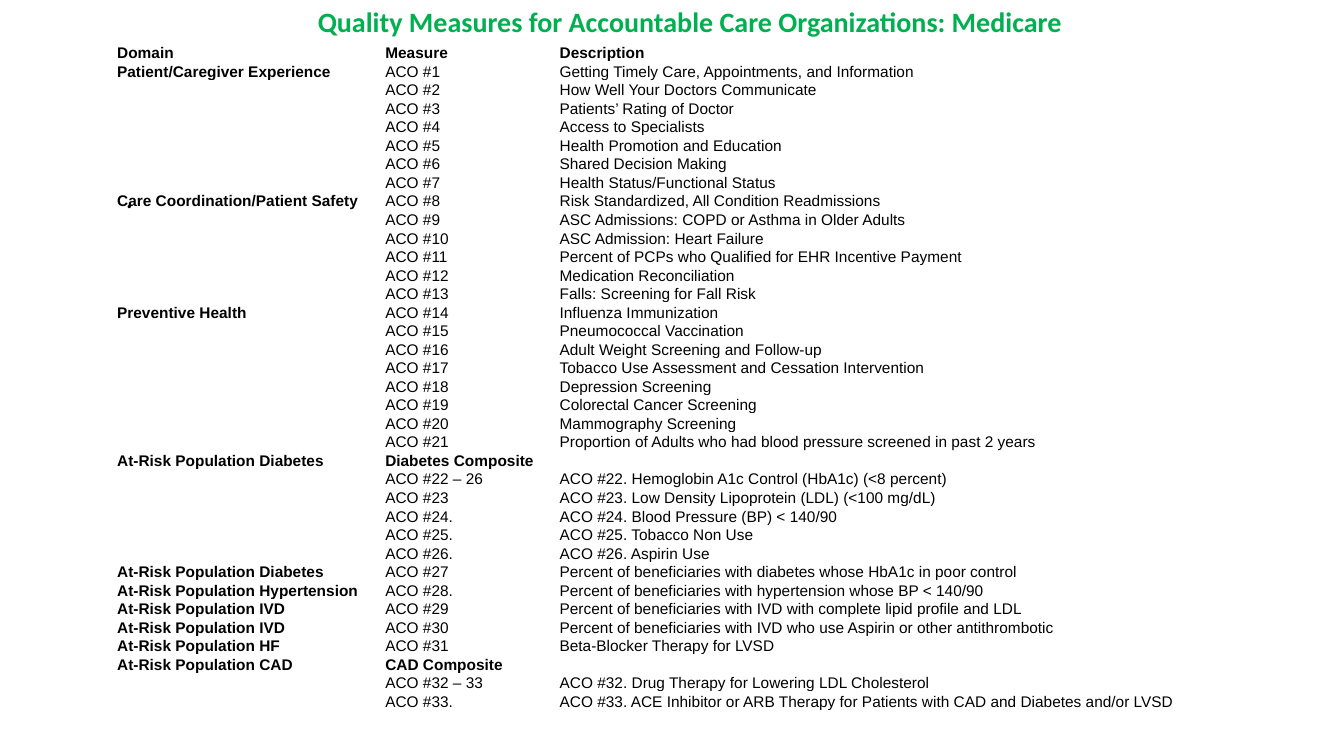
from dataclasses import dataclass

from lxml import etree
from pptx import Presentation
from pptx import util as u
from pptx.dml import color
from pptx.enum import text
from pptx.oxml import ns

Pt = u.Pt


@dataclass(frozen=True)
class Theme:
    green: str = "00B050"
    black: str = "000000"
    white: str = "FFFFFF"
    heading_font: str = "Calibri"
    table_font: str = "Arial"
    heading_size: float = 20
    table_size: float = 11


THEME = Theme()
NO_TABLE_STYLE = "{2D5ABB26-0587-4C30-8999-92F81FD0307C}"
HEADER = ("Domain", "Measure", "Description")

# Each domain with its measures; a measure without description heads a composite
DOMAINS = [
    ("Patient/Caregiver Experience", [
        ("ACO #1", "Getting Timely Care, Appointments, and Information"),
        ("ACO #2", "How Well Your Doctors Communicate"),
        ("ACO #3", "Patients’ Rating of Doctor"),
        ("ACO #4", "Access to Specialists"),
        ("ACO #5", "Health Promotion and Education"),
        ("ACO #6", "Shared Decision Making"),
        ("ACO #7", "Health Status/Functional Status")]),
    ("Care Coordination/Patient Safety", [
        ("ACO #8", "Risk Standardized, All Condition Readmissions"),
        ("ACO #9", "ASC Admissions: COPD or Asthma in Older Adults"),
        ("ACO #10", "ASC Admission: Heart Failure"),
        ("ACO #11", "Percent of PCPs who Qualified for EHR Incentive Payment"),
        ("ACO #12", "Medication Reconciliation"),
        ("ACO #13", "Falls: Screening for Fall Risk")]),
    ("Preventive Health", [
        ("ACO #14", "Influenza Immunization"),
        ("ACO #15", "Pneumococcal Vaccination"),
        ("ACO #16", "Adult Weight Screening and Follow-up"),
        ("ACO #17", "Tobacco Use Assessment and Cessation Intervention"),
        ("ACO #18", "Depression Screening"),
        ("ACO #19", "Colorectal Cancer Screening"),
        ("ACO #20", "Mammography Screening"),
        ("ACO #21", "Proportion of Adults who had blood pressure screened in past 2 years")]),
    ("At-Risk Population Diabetes", [
        ("Diabetes Composite", ""),
        ("ACO #22 – 26", "ACO #22. Hemoglobin A1c Control (HbA1c) (<8 percent)"),
        ("ACO #23", "ACO #23. Low Density Lipoprotein (LDL) (<100 mg/dL)"),
        ("ACO #24.", "ACO #24. Blood Pressure (BP) < 140/90"),
        ("ACO #25.", "ACO #25. Tobacco Non Use"),
        ("ACO #26.", "ACO #26. Aspirin Use")]),
    ("At-Risk Population Diabetes", [
        ("ACO #27", "Percent of beneficiaries with diabetes whose HbA1c in poor control")]),
    ("At-Risk Population Hypertension", [
        ("ACO #28.", "Percent of beneficiaries with hypertension whose BP < 140/90")]),
    ("At-Risk Population IVD", [
        ("ACO #29", "Percent of beneficiaries with IVD with complete lipid profile and LDL")]),
    ("At-Risk Population IVD", [
        ("ACO #30", "Percent of beneficiaries with IVD who use Aspirin or other antithrombotic")]),
    ("At-Risk Population HF", [
        ("ACO #31", "Beta-Blocker Therapy for LVSD")]),
    ("At-Risk Population CAD", [
        ("CAD Composite", ""),
        ("ACO #32 – 33", "ACO #32. Drug Therapy for Lowering LDL Cholesterol"),
        ("ACO #33.", "ACO #33. ACE Inhibitor or ARB Therapy for Patients with CAD "
                     "and Diabetes and/or LVSD")]),
]


def style_runs(paragraph, font, size, rgb, bold):
    for run in paragraph.runs:
        run.font.name = font
        run.font.size = Pt(size)
        run.font.bold = bold
        run.font.color.rgb = color.RGBColor.from_string(rgb)


def add_heading(slide, box, words, rgb, bold, align, anchor, before=0):
    """One paragraph in the heading type, in a box of (left, top, width, height)."""
    heading = slide.shapes.add_textbox(*map(Pt, box))
    frame = heading.text_frame
    frame.word_wrap = True
    frame.vertical_anchor = anchor
    frame.text = words
    paragraph = frame.paragraphs[0]
    paragraph.alignment = align
    paragraph.line_spacing = 0.9
    paragraph.space_before = Pt(before)
    style_runs(paragraph, THEME.heading_font, THEME.heading_size, rgb, bold)


def add_borders(cell):
    properties = cell._tc.get_or_add_tcPr()
    for side in ("lnL", "lnR", "lnT", "lnB"):
        line = etree.SubElement(properties, ns.qn(f"a:{side}"), w=str(Pt(1)))
        fill = etree.SubElement(line, ns.qn("a:solidFill"))
        etree.SubElement(fill, ns.qn("a:srgbClr"), val=THEME.white)


def fill_cell(cell, words, bold):
    cell.margin_left = cell.margin_right = Pt(0.9)
    cell.margin_top = cell.margin_bottom = 0
    cell.vertical_anchor = text.MSO_ANCHOR.BOTTOM
    add_borders(cell)
    cell.fill.background()
    cell.text_frame.text = words
    paragraph = cell.text_frame.paragraphs[0]
    style_runs(paragraph, THEME.table_font, THEME.table_size, THEME.black, bold)
    if not words:  # keeps empty cells from stretching the row
        etree.SubElement(paragraph._p, ns.qn("a:endParaRPr"),
                         sz=str(int(THEME.table_size * 50)))


def add_measures(slide, box, column_shares):
    """Table of all measures; rows share the height of the box evenly."""
    left, top, width, height = box
    rows = [HEADER]
    for domain, measures in DOMAINS:
        for index, (measure, description) in enumerate(measures):
            rows.append((domain if index == 0 else "", measure, description))

    frame = slide.shapes.add_table(len(rows), len(HEADER), *map(Pt, box))
    measure_table = frame.table
    measure_table.first_row = measure_table.horz_banding = False
    measure_table._tbl.tblPr.find(ns.qn("a:tableStyleId")).text = NO_TABLE_STYLE
    for column, share in zip(measure_table.columns, column_shares):
        column.width = Pt(width * share / sum(column_shares))
    for row in measure_table.rows:
        row.height = Pt(height / len(rows))

    for r, row in enumerate(rows):
        for c, words in enumerate(row):
            bold = r == 0 or c == 0 or words.endswith("Composite")
            fill_cell(measure_table.cell(r, c), words, bold)
        if row[1] == "Diabetes Composite":
            measure_table.cell(r, 1).merge(measure_table.cell(r, 2))


def build_quality_slide(deck):
    slide = deck.slides.add_slide(deck.slide_layouts[6])
    # Title
    add_heading(slide, (41, -13, 903.6, 44),
                "Quality Measures for Accountable Care Organizations: Medicare",
                THEME.green, True, text.PP_ALIGN.CENTER, text.MSO_ANCHOR.BOTTOM)
    # Subtitle, a single full stop
    add_heading(slide, (82.8, 128.2, 819.4, 401.8), ".", THEME.black, False,
                text.PP_ALIGN.LEFT, text.MSO_ANCHOR.TOP, before=10)
    # Measures
    add_measures(slide, (82.8, 31, 807.1, 474.8), (2.66, 1.73, 6.82))


def main():
    deck = Presentation()
    deck.slide_width, deck.slide_height = Pt(960), Pt(540)
    build_quality_slide(deck)
    deck.save("out.pptx")


if __name__ == "__main__":
    main()
